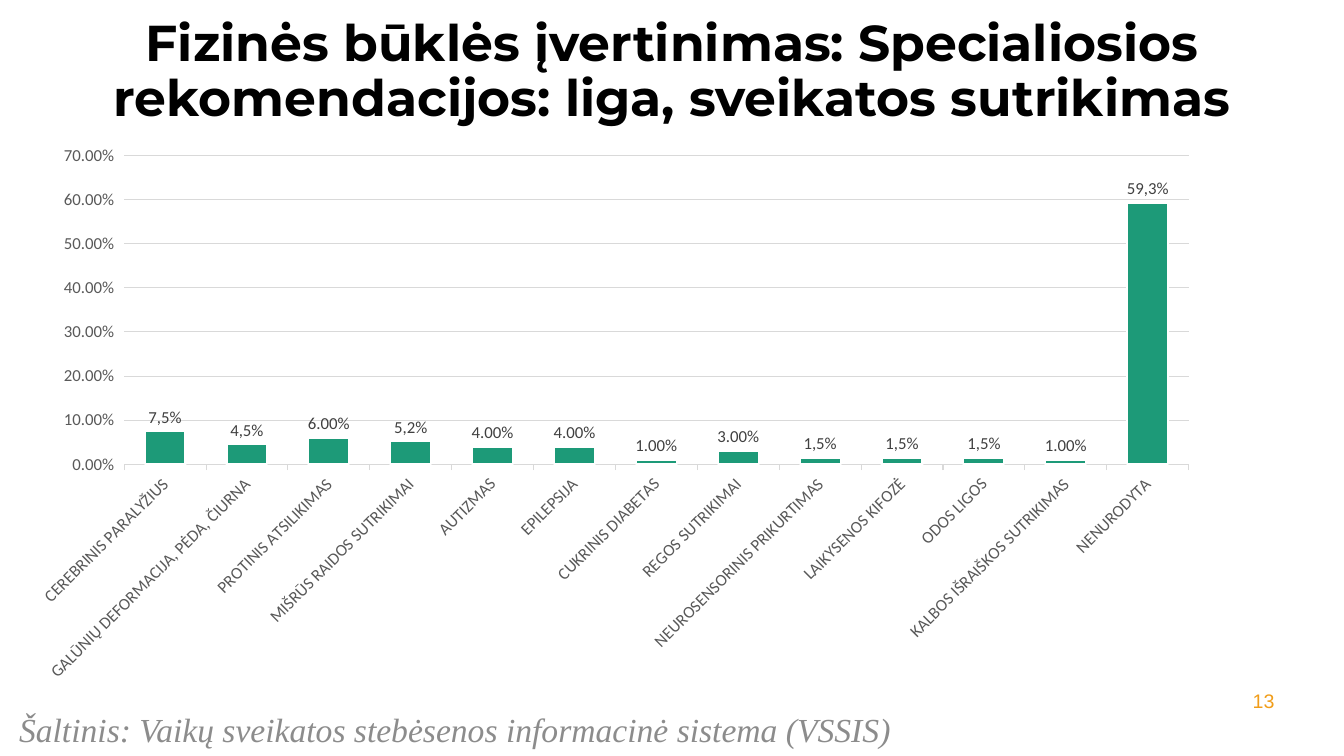
from lxml.etree import SubElement
from pptx import Presentation
from pptx.chart.data import CategoryChartData
from pptx.dml.color import RGBColor
from pptx.enum.chart import XL_CHART_TYPE, XL_LABEL_POSITION, XL_TICK_MARK
from pptx.enum.text import MSO_ANCHOR, MSO_AUTO_SIZE, PP_ALIGN
from pptx.oxml.ns import qn
from pptx.util import Inches, Pt

SLIDE_WIDTH, SLIDE_HEIGHT = Inches(13.33), Inches(7.5)
GRID_GREY, AXIS_GREY, LABEL_GREY = "D9D9D9", "595959", "404040"
DISORDERS = [
    ("CEREBRINIS PARALYŽIUS", 0.075, "7,5%"),
    ("GALŪNIŲ DEFORMACIJA, PĖDA, ČIURNA", 0.045, "4,5%"),
    ("PROTINIS ATSILIKIMAS", 0.06, None),
    ("MIŠRŪS RAIDOS SUTRIKIMAI", 0.052, "5,2%"),
    ("AUTIZMAS", 0.04, None),
    ("EPILEPSIJA", 0.04, None),
    ("CUKRINIS DIABETAS", 0.01, None),
    ("REGOS SUTRIKIMAI", 0.03, None),
    ("NEUROSENSORINIS PRIKURTIMAS", 0.015, "1,5%"),
    ("LAIKYSENOS KIFOZĖ", 0.015, "1,5%"),
    ("ODOS LIGOS", 0.015, "1,5%"),
    ("KALBOS IŠRAIŠKOS SUTRIKIMAS", 0.01, None),
    ("NENURODYTA", 0.593, "59,3%"),
]


def colour(code):
    """Turn a hex string into a colour."""
    return RGBColor.from_string(code)


def area(left, top, width, height):
    """Turn percentages of the slide's size into lengths."""
    return [int(share * side / 100) for share, side in
            zip((left, top, width, height), (SLIDE_WIDTH, SLIDE_HEIGHT) * 2)]


def style_font(font, size, code, name="Calibri", bold=False, italic=False):
    """Set the look of a font."""
    font.size, font.name = Pt(size), name
    font.bold, font.italic = bold, italic
    font.color.rgb = colour(code)


def style_line(line, code, width):
    """Set the colour and width of a line."""
    line.color.rgb = colour(code)
    line.width = Pt(width)


def add_title(page, text):
    """Fill the title placeholder across the top of the page."""
    title = page.shapes.title
    title.left, title.top, title.width, title.height = area(0, 0, 100, 19.2)
    frame = title.text_frame
    frame.text = text
    frame.word_wrap, frame.auto_size = True, MSO_AUTO_SIZE.NONE
    frame.vertical_anchor = MSO_ANCHOR.MIDDLE
    para = frame.paragraphs[0]
    para.alignment, para.line_spacing = PP_ALIGN.CENTER, 0.9
    style_font(para.font, 36, "000000", "Montserrat", bold=True)


def add_text(page, place, text, align, *look, italic=False):
    """Add a one-line text box."""
    frame = page.shapes.add_textbox(*area(*place)).text_frame
    frame.word_wrap = True
    para = frame.paragraphs[0]
    para.text, para.alignment = text, align
    style_font(para.font, *look, italic=italic)


def set_plot_area(chart, x, y, w, h):
    """Fix the inner plot area as shares of the chart."""
    plot_area = chart.element.find(".//" + qn("c:plotArea"))
    for old in plot_area.findall(qn("c:layout")):
        plot_area.remove(old)
    layout = SubElement(plot_area, qn("c:layout"))
    plot_area.insert(0, layout)
    manual = SubElement(layout, qn("c:manualLayout"))
    settings = dict(layoutTarget="inner", xMode="edge", yMode="edge", x=x, y=y, w=w, h=h)
    for tag, value in settings.items():
        SubElement(manual, qn("c:" + tag)).set("val", str(value))


def style_axes(chart):
    """Format the slanted category axis and the percentage axis."""
    categories, values = chart.category_axis, chart.value_axis
    for axis in (categories, values):
        style_font(axis.tick_labels.font, 12, AXIS_GREY)
        axis.major_tick_mark = XL_TICK_MARK.OUTSIDE
        axis.minor_tick_mark = XL_TICK_MARK.NONE
    style_line(categories.format.line, GRID_GREY, 0.75)
    slant = categories._element.find(qn("c:txPr")).find(qn("a:bodyPr"))
    slant.set("rot", "-2700000")
    slant.set("vert", "horz")
    values.minimum_scale, values.maximum_scale, values.major_unit = 0, 0.7, 0.1
    values.tick_labels.number_format = "0.00%"
    values.tick_labels.number_format_is_linked = False
    values.format.line.fill.background()
    style_line(values.major_gridlines.format.line, GRID_GREY, 0.75)


def style_labels(series):
    """Show values above the columns, with custom wording where given."""
    labels = series.data_labels
    labels.show_value, labels.position = True, XL_LABEL_POSITION.OUTSIDE_END
    labels.number_format, labels.number_format_is_linked = "0.00%", False
    style_font(labels.font, 12, LABEL_GREY)
    for index, (_, _, wording) in enumerate(DISORDERS):
        if wording:
            label = series.points[index].data_label
            label.text_frame.text = wording
            label.position = XL_LABEL_POSITION.OUTSIDE_END
            style_font(label.text_frame.paragraphs[0].font, 12, LABEL_GREY)


def add_disorder_chart(page, place):
    """Add the column chart of disorders."""
    data = CategoryChartData(number_format="0.00%")
    data.categories = [name for name, _, _ in DISORDERS]
    data.add_series("Series 1", [value for _, value, _ in DISORDERS])
    chart = page.shapes.add_chart(XL_CHART_TYPE.COLUMN_CLUSTERED, *area(*place), data).chart
    chart.has_title = chart.has_legend = False
    style_font(chart.font, 10, "000000")
    plot = chart.plots[0]
    plot.gap_width, plot.vary_by_categories = 100, False
    series = plot.series[0]
    series.format.fill.solid()
    series.format.fill.fore_color.rgb = colour("1D9A78")
    style_line(series.format.line, "FFFFFF", 1.5)
    style_labels(series)
    style_axes(chart)
    set_plot_area(chart, 0.076, 0.019, 0.911, 0.573)


def main():
    """Build the slide and save it."""
    deck = Presentation()
    deck.slide_width, deck.slide_height = SLIDE_WIDTH, SLIDE_HEIGHT
    page = deck.slides.add_slide(deck.slide_layouts[5])
    add_title(page, "Fizinės būklės įvertinimas: Specialiosios "
                    "rekomendacijos: liga, sveikatos sutrikimas")
    add_text(page, (0.68, 93.07, 67.29, 5.07),
             "Šaltinis: Vaikų sveikatos stebėsenos informacinė sistema (VSSIS)",
             PP_ALIGN.LEFT, 24, "8C8C8C", "Times New Roman", italic=True)
    add_text(page, (91.67, 90.53, 3.9, 5.33), "13", PP_ALIGN.RIGHT, 14, "F19D19", "Arial")
    add_disorder_chart(page, (2.63, 19.2, 86.95, 71.33))
    deck.save("out.pptx")


if __name__ == "__main__":
    main()
